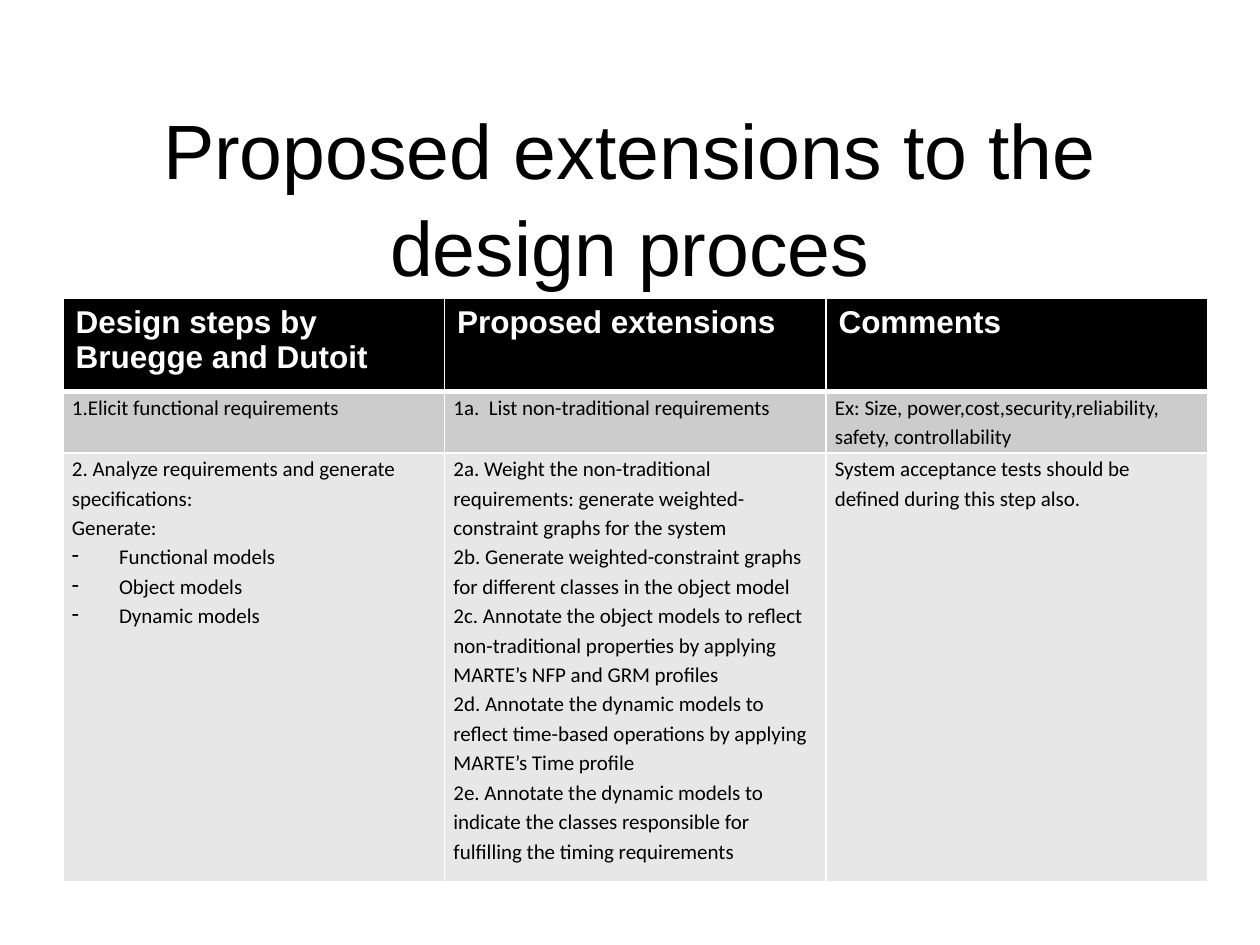
import pptx
import pptx.dml.color
import pptx.enum.text
import pptx.oxml
import pptx.oxml.ns
import pptx.util

Cm = pptx.util.Cm
Pt = pptx.util.Pt

TITLE = "Proposed extensions to the design proces"
HEADINGS = ["Design steps by Bruegge and Dutoit", "Proposed extensions", "Comments"]
# Each cell is a list of paragraphs; a leading "- " marks a dashed item
ELICIT_STEP = [
    ["1.Elicit functional requirements"],
    ["1a.  List non-traditional requirements"],
    ["Ex: Size, power,cost,security,reliability, safety, controllability"],
]
ANALYZE_STEP = [
    [
        "2. Analyze requirements and generate specifications:",
        "Generate:",
        "- Functional models",
        "- Object models",
        "- Dynamic models",
    ],
    [
        "2a. Weight the non-traditional requirements: generate weighted-constraint graphs for the system",
        "2b. Generate weighted-constraint graphs for different classes in the object model",
        "2c. Annotate the object models to reflect non-traditional properties by applying MARTE’s NFP and GRM profiles",
        "2d. Annotate the dynamic models to reflect time-based operations by applying MARTE’s Time profile",
        "2e. Annotate the dynamic models to indicate the classes responsible for fulfilling the timing requirements",
    ],
    ["System acceptance tests should be defined during this step also."],
]


def color(hex_text):
    return pptx.dml.color.RGBColor.from_string(hex_text)


def add_dash(paragraph, indent=Cm(0.95)):
    properties = paragraph._p.get_or_add_pPr()
    properties.set("marL", str(indent))
    properties.set("indent", str(-indent))
    dash = pptx.oxml.parse_xml(f'<a:buChar {pptx.oxml.ns.nsdecls("a")} char="-"/>')
    properties.append(dash)


def write(frame, lines, size=12, font="Calibri", ink="000000", bold=False,
          align=pptx.enum.text.PP_ALIGN.LEFT, spacing=1.0):
    for index, line in enumerate(lines):
        paragraph = frame.paragraphs[0] if index == 0 else frame.add_paragraph()
        if line.startswith("- "):
            add_dash(paragraph)
        paragraph.alignment = align
        paragraph.line_spacing = spacing
        run = paragraph.add_run()
        run.text = line.removeprefix("- ")
        run.font.size = Pt(size)
        run.font.name = font
        run.font.bold = bold
        run.font.color.rgb = color(ink)


class SlideBuilder:
    heading_font = "Arial"
    rule_color = "FFFFFF"
    header_fill = "000000"
    band_fills = ["CCCCCC", "E7E7E7"]

    def __init__(self, slide):
        self.slide = slide

    def title(self, text, left, top, width, height):
        title = self.slide.shapes.title
        title.left, title.top, title.width, title.height = left, top, width, height
        frame = title.text_frame
        frame.auto_size = pptx.enum.text.MSO_AUTO_SIZE.NONE
        frame.vertical_anchor = pptx.enum.text.MSO_ANCHOR.MIDDLE
        write(frame, [text], size=44, font=self.heading_font,
              align=pptx.enum.text.PP_ALIGN.CENTER, spacing=1.05)

    def paint(self, cell, fill, top=1, bottom=1):
        properties = cell._tc.get_or_add_tcPr()
        for side, points in {"L": 1, "R": 1, "T": top, "B": bottom}.items():
            properties.append(pptx.oxml.parse_xml(
                f'<a:ln{side} {pptx.oxml.ns.nsdecls("a")} w="{Pt(points)}">'
                f'<a:solidFill><a:srgbClr val="{self.rule_color}"/></a:solidFill>'
                f'</a:ln{side}>'))
        cell.fill.solid()
        cell.fill.fore_color.rgb = color(fill)

    def table(self, headings, steps, left, top, column_width, row_heights):
        table = self.slide.shapes.add_table(
            len(row_heights), len(headings), left, top,
            column_width * len(headings), sum(row_heights)).table
        for column in table.columns:
            column.width = column_width
        for row, height in zip(table.rows, row_heights):
            row.height = height

        # Header row
        for column, heading in enumerate(headings):
            cell = table.cell(0, column)
            self.paint(cell, self.header_fill, bottom=3)
            write(cell.text_frame, [heading], size=18, font=self.heading_font,
                  ink="FFFFFF", bold=True)

        # Design steps
        for row, (step, fill) in enumerate(zip(steps, self.band_fills), start=1):
            for column, lines in enumerate(step):
                cell = table.cell(row, column)
                cell.margin_left = cell.margin_right = Cm(0.18)
                cell.margin_top = cell.margin_bottom = 0
                self.paint(cell, fill, top=3 if row == 1 else 1)
                write(cell.text_frame, lines, spacing=1.15)


def main():
    presentation = pptx.Presentation()
    presentation.slide_width = Cm(25.4)
    presentation.slide_height = Cm(19.05)
    title_only = presentation.slide_layouts[5]
    builder = SlideBuilder(presentation.slides.add_slide(title_only))

    builder.title(TITLE, Cm(1.27), Cm(2.33), Cm(22.86), Cm(3.18))
    builder.table(HEADINGS, [ELICIT_STEP, ANALYZE_STEP], Cm(1.27), Cm(6.02),
                  column_width=Cm(7.69), row_heights=[Cm(1.87), Cm(1.24), Cm(8.65)])
    presentation.save("out.pptx")


if __name__ == "__main__":
    main()
